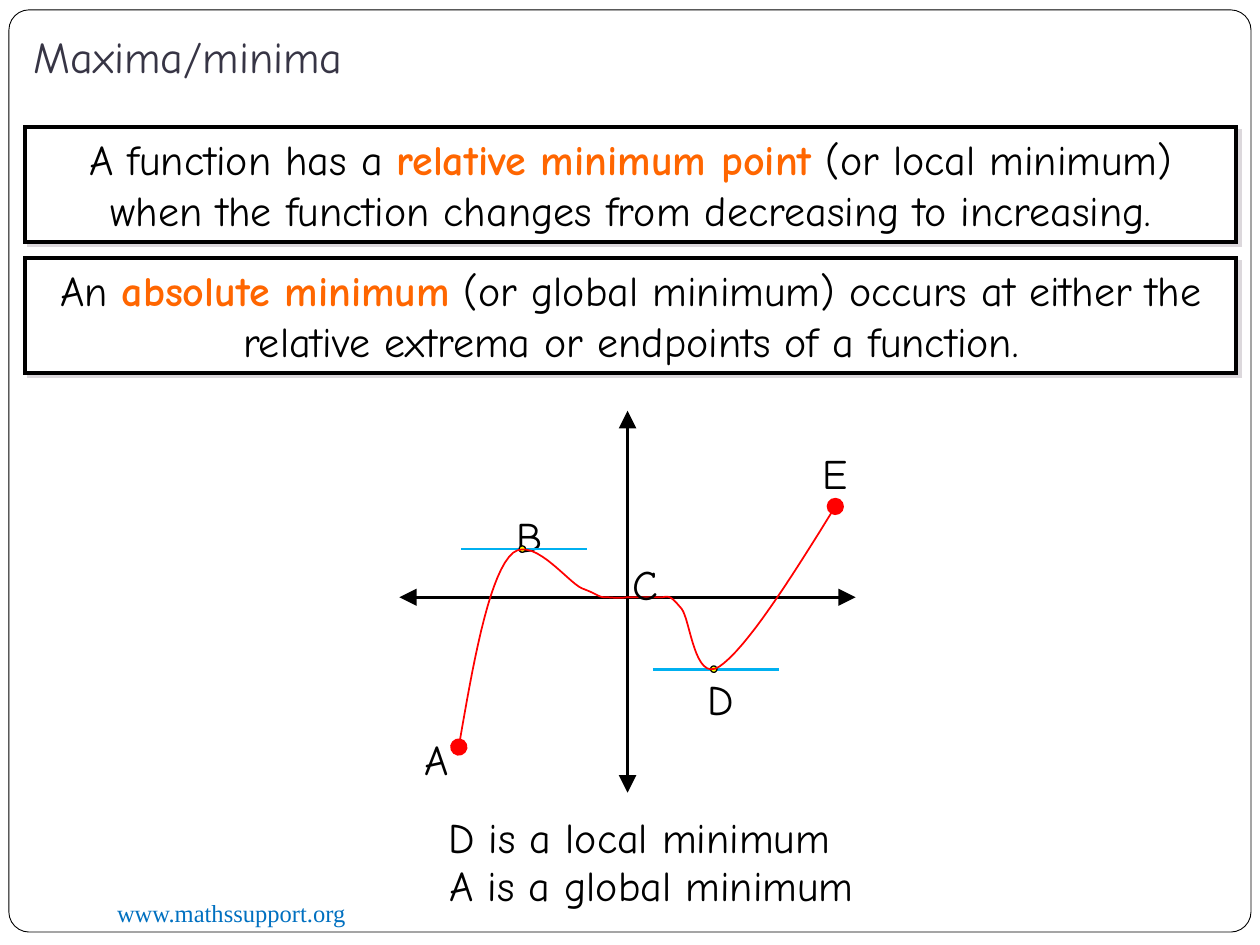
from lxml.etree import SubElement
from pptx import Presentation
from pptx.dml.color import RGBColor
from pptx.enum.shapes import MSO_CONNECTOR, MSO_SHAPE
from pptx.enum.text import MSO_ANCHOR, MSO_AUTO_SIZE, PP_ALIGN
from pptx.oxml.ns import qn
from pptx.util import Cm, Pt

BLACK = RGBColor(0x00, 0x00, 0x00)
WHITE = RGBColor(0xFF, 0xFF, 0xFF)
ORANGE = RGBColor(0xFF, 0x66, 0x00)
YELLOW = RGBColor(0xFF, 0xFF, 0x00)
RED = RGBColor(0xFF, 0x00, 0x00)
SKY = RGBColor(0x00, 0xB0, 0xF0)
LINK_BLUE = RGBColor(0x00, 0x70, 0xC0)
TITLE_GREY = RGBColor(0x37, 0x35, 0x45)
FONT = "Comic Neue"

CURVE_START = (9.25, 15.06)
CURVE_SEGMENTS = [
    ((9.53, 13.41), (9.83, 11.76), (10.26, 11.23)),
    ((10.67, 10.69), (11.43, 11.73), (11.73, 11.86)),
    ((12.07, 11.99), (12.07, 12.04), (12.19, 12.04)),
    ((12.32, 12.04), (12.47, 12.07), (12.65, 12.04)),
    ((12.83, 12.04), (13.18, 12.04), (13.36, 12.04)),
    ((13.51, 12.01), (13.54, 12.04), (13.74, 12.27)),
    ((13.92, 12.5), (14.0, 13.77), (14.5, 13.44)),
    ((15.04, 13.08), (15.95, 11.66), (16.84, 10.21)),
]


def add_run(paragraph, text, color=BLACK, size=24, font=FONT, bold=False):
    run = paragraph.add_run()
    run.text = text
    run.font.name = font
    run.font.size = Pt(size)
    run.font.bold = bold
    run.font.color.rgb = color


def add_text(slide, left, top, width, height, text, wrap=True, **style):
    box = slide.shapes.add_textbox(Cm(left), Cm(top), Cm(width), Cm(height))
    frame = box.text_frame
    frame.word_wrap = wrap
    frame.auto_size = MSO_AUTO_SIZE.SHAPE_TO_FIT_TEXT
    add_run(frame.paragraphs[0], text, **style)
    return frame


def add_title(slide, text):
    frame = add_text(slide, 0.43, 0.51, 22.86, 1.4, text, color=TITLE_GREY, size=25.2)
    frame.auto_size = MSO_AUTO_SIZE.NONE
    frame.vertical_anchor = MSO_ANCHOR.BOTTOM
    frame.margin_bottom = Cm(0.25)


def add_outlined(slide, kind, left, top, width, height, fill, weight):
    shape = slide.shapes.add_shape(kind, Cm(left), Cm(top), Cm(width), Cm(height))
    shape.shadow.inherit = False
    shape.fill.solid()
    shape.fill.fore_color.rgb = fill
    shape.line.color.rgb = BLACK
    shape.line.width = Pt(weight)
    return shape


def add_definition(slide, top, before, term, after):
    shape = add_outlined(slide, MSO_SHAPE.RECTANGLE, 0.51, top, 24.41, 2.31, WHITE, 2.25)
    properties = shape._element.spPr
    SubElement(properties.find(qn("a:ln")), qn("a:miter"), lim="800000")
    shadow = SubElement(properties.find(qn("a:effectLst")), qn("a:outerShdw"),
                        dist=str(Pt(2.8)), dir="2700000", algn="ctr", rotWithShape="0")
    SubElement(shadow, qn("a:srgbClr"), val="DCD8DC")
    frame = shape.text_frame
    frame.word_wrap = True
    frame.auto_size = MSO_AUTO_SIZE.SHAPE_TO_FIT_TEXT
    frame.vertical_anchor = MSO_ANCHOR.TOP
    paragraph = frame.paragraphs[0]
    paragraph.alignment = PP_ALIGN.CENTER
    add_run(paragraph, before)
    add_run(paragraph, term, color=ORANGE, bold=True)
    add_run(paragraph, after)


def set_line(shape, color, weight, ends=None):
    shape.line.color.rgb = color
    shape.line.width = Pt(weight)
    if ends:
        line = shape._element.spPr.find(qn("a:ln"))
        for tag in ("a:headEnd", "a:tailEnd"):
            SubElement(line, qn(tag), type=ends, w="lg", len="lg")


def add_line(slide, start, end, color, weight, ends=None):
    connector = slide.shapes.add_connector(
        MSO_CONNECTOR.STRAIGHT, *(Cm(value) for value in start + end))
    set_line(connector, color, weight, ends)
    SubElement(connector._element.spPr, qn("a:effectLst"))


def add_turning_point(slide, x, y, tangent_left):
    add_line(slide, (tangent_left, y), (tangent_left + 2.54, y), SKY, 1.5)
    size = 0.13
    add_outlined(slide, MSO_SHAPE.OVAL, x - size / 2, y - size / 2, size, size, YELLOW, 0.75)


def bezier_point(controls, t):
    weights = ((1 - t) ** 3, 3 * t * (1 - t) ** 2, 3 * t ** 2 * (1 - t), t ** 3)
    return tuple(Cm(sum(weight * point[axis] for weight, point in zip(weights, controls)))
                 for axis in (0, 1))


def add_curve(slide, start, segments, steps=16):
    points = []
    current = start
    for segment in segments:
        controls = (current, *segment)
        points += [bezier_point(controls, step / steps) for step in range(1, steps + 1)]
        current = segment[-1]
    builder = slide.shapes.build_freeform(Cm(start[0]), Cm(start[1]))
    builder.add_line_segments(points, close=False)
    curve = builder.convert_to_shape()
    curve.shadow.inherit = False
    curve.fill.background()
    set_line(curve, RED, 1, "oval")


def add_graph(slide):
    add_line(slide, (8.05, 12.04), (17.25, 12.04), BLACK, 1.75, "triangle")
    add_line(slide, (12.65, 8.28), (12.65, 15.98), BLACK, 2, "triangle")
    for letter, left, top, width in (
        ("B", 10.16, 10.16, 1.24),
        ("E", 16.33, 8.89, 1.02),
        ("A", 8.31, 14.66, 1.14),
        ("D", 14.02, 13.46, 1.42),
    ):
        add_text(slide, left, top, width, 1.27, letter)
    add_turning_point(slide, 10.53, 11.07, 9.3)
    add_turning_point(slide, 14.39, 13.49, 13.16)
    add_curve(slide, CURVE_START, CURVE_SEGMENTS)
    add_text(slide, 12.5, 11.13, 1.24, 1.27, "C")


def main():
    presentation = Presentation()
    presentation.slide_width = Cm(25.4)
    presentation.slide_height = Cm(19.05)
    slide = presentation.slides.add_slide(presentation.slide_layouts[6])

    border = add_outlined(slide, MSO_SHAPE.ROUNDED_RECTANGLE,
                          0.18, 0.2, 25.04, 18.59, WHITE, 0.5)
    border.adjustments[0] = 0.022
    add_text(slide, 2.11, 17.98, 8.26, 0.86, "www.mathssupport.org",
             color=LINK_BLUE, size=14, font="Times New Roman")
    add_definition(slide, 2.57, "A function has a ", "relative minimum point",
                   " (or local minimum) when the function changes from decreasing to increasing.")
    add_definition(slide, 5.21, "An ", "absolute minimum",
                   " (or global minimum) occurs at either the relative extrema"
                   " or endpoints of a function.")
    add_text(slide, 8.79, 16.23, 8.41, 1.27, "D is a local minimum", wrap=False)
    add_text(slide, 8.81, 17.2, 8.94, 1.27, "A is a global minimum", wrap=False)
    add_graph(slide)
    add_title(slide, "Maxima/minima")
    presentation.save("out.pptx")


if __name__ == "__main__":
    main()
